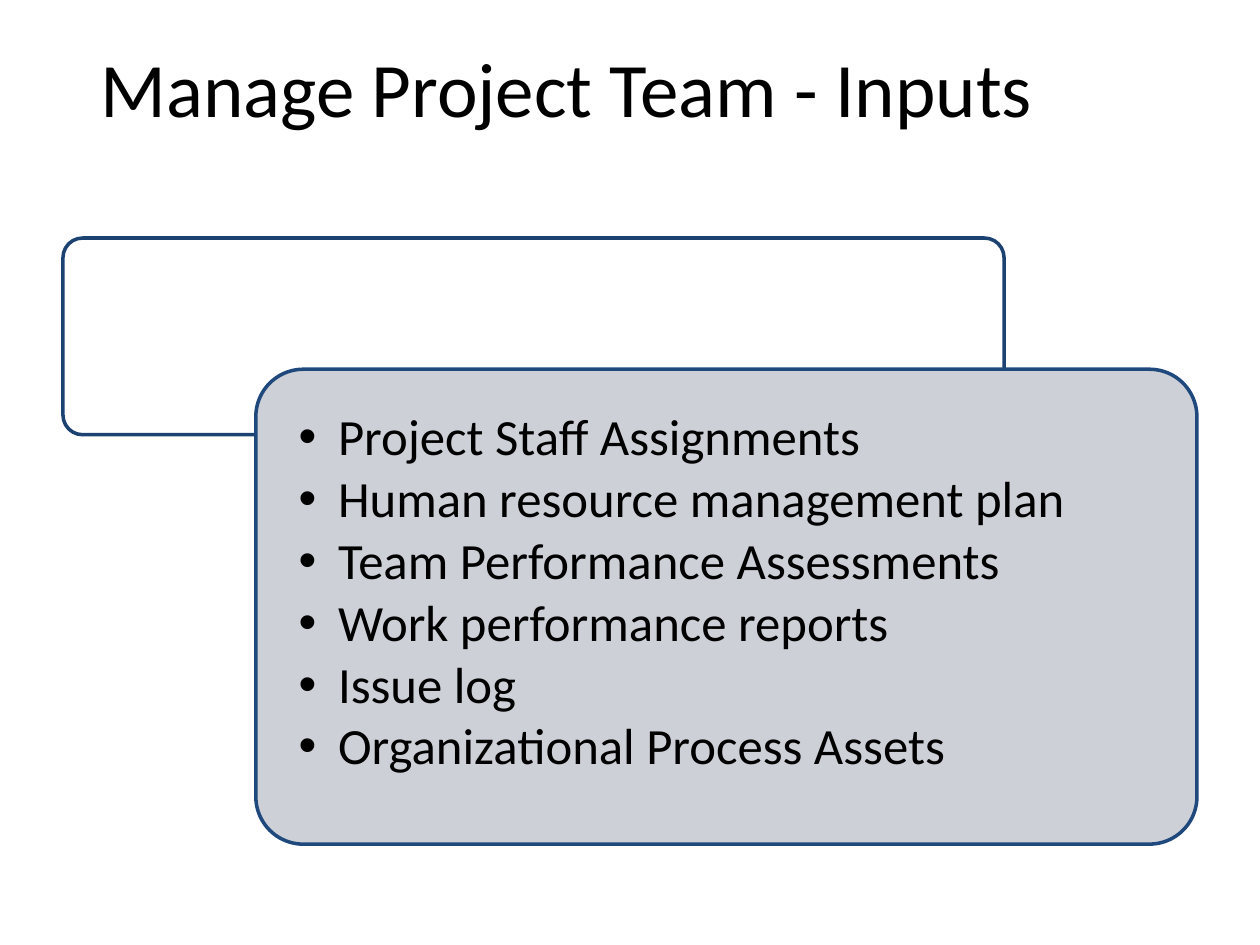
"""Build the slide listing the inputs of managing a project team."""
from lxml.etree import SubElement
from pptx import Presentation
from pptx.dml.color import RGBColor
from pptx.enum.shapes import MSO_SHAPE
from pptx.enum.text import MSO_ANCHOR, PP_ALIGN
from pptx.oxml.ns import qn
from pptx.util import Pt

BLACK = RGBColor(0x00, 0x00, 0x00)
WHITE = RGBColor(0xFF, 0xFF, 0xFF)
GREY = RGBColor(0xCD, 0xD0, 0xD7)
NAVY = RGBColor(0x1C, 0x42, 0x71)
BLUE = RGBColor(0x1F, 0x49, 0x7D)


def write(frame, *lines, size, align=PP_ALIGN.LEFT, anchor=MSO_ANCHOR.TOP,
          inset=None, bullet=None, indent=0, level=0, space=None, after=None):
    frame.word_wrap = True
    frame.vertical_anchor = anchor
    if inset is not None:
        frame.margin_left = frame.margin_right = Pt(inset)
        frame.margin_top = frame.margin_bottom = Pt(inset)
    for i, line in enumerate(lines):
        para = frame.paragraphs[0] if i == 0 else frame.add_paragraph()
        para.alignment = align
        para.level = level
        if space is not None:
            para.line_spacing = space
        if after is not None:
            para.space_after = Pt(after)
        if bullet:
            props = para._p.get_or_add_pPr()
            props.set("marL", str(Pt(indent)))
            props.set("indent", str(-Pt(indent)))
            SubElement(props, qn("a:buFont")).set("typeface", "Arial")
            SubElement(props, qn("a:buChar")).set("char", bullet)
        run = para.add_run()
        run.text = line
        run.font.name = "Calibri"
        run.font.size = Pt(size)
        run.font.color.rgb = BLACK


deck = Presentation()
deck.slide_width, deck.slide_height = Pt(720), Pt(540)
slide = deck.slides.add_slide(deck.slide_layouts[5])
shapes = slide.shapes

title = shapes.title
title.left, title.top, title.width, title.height = Pt(36), Pt(18), Pt(576), Pt(62.64)
write(title.text_frame, "Manage Project Team - Inputs", size=44,
      align=PP_ALIGN.CENTER, anchor=MSO_ANCHOR.MIDDLE)

panels = [
    (36, 136, 112.4, WHITE, NAVY),
    (146.2, 211, 271.4, GREY, BLUE),
]
wide = 537.8
for left, top, high, fill, edge in panels:
    panel = shapes.add_shape(MSO_SHAPE.ROUNDED_RECTANGLE,
                             Pt(left), Pt(top), Pt(wide), Pt(high))
    panel.adjustments[0] = 0.1
    panel.shadow.inherit = False
    panel.fill.solid()
    panel.fill.fore_color.rgb = fill
    panel.line.color.rgb = edge
    panel.line.width = Pt(2)

pad = 7.95
inputs = shapes.add_textbox(Pt(left + pad), Pt(top + pad),
                            Pt(wide - 2 * pad), Pt(high - 2 * pad))
write(inputs.text_frame,
      "Project Staff Assignments",
      "Human resource management plan",
      "Team Performance Assessments",
      "Work performance reports",
      "Issue log",
      "Organizational Process Assets",
      size=29, inset=16.5, bullet="•", indent=22.5, level=1,
      space=0.9, after=4)

deck.save("out.pptx")
